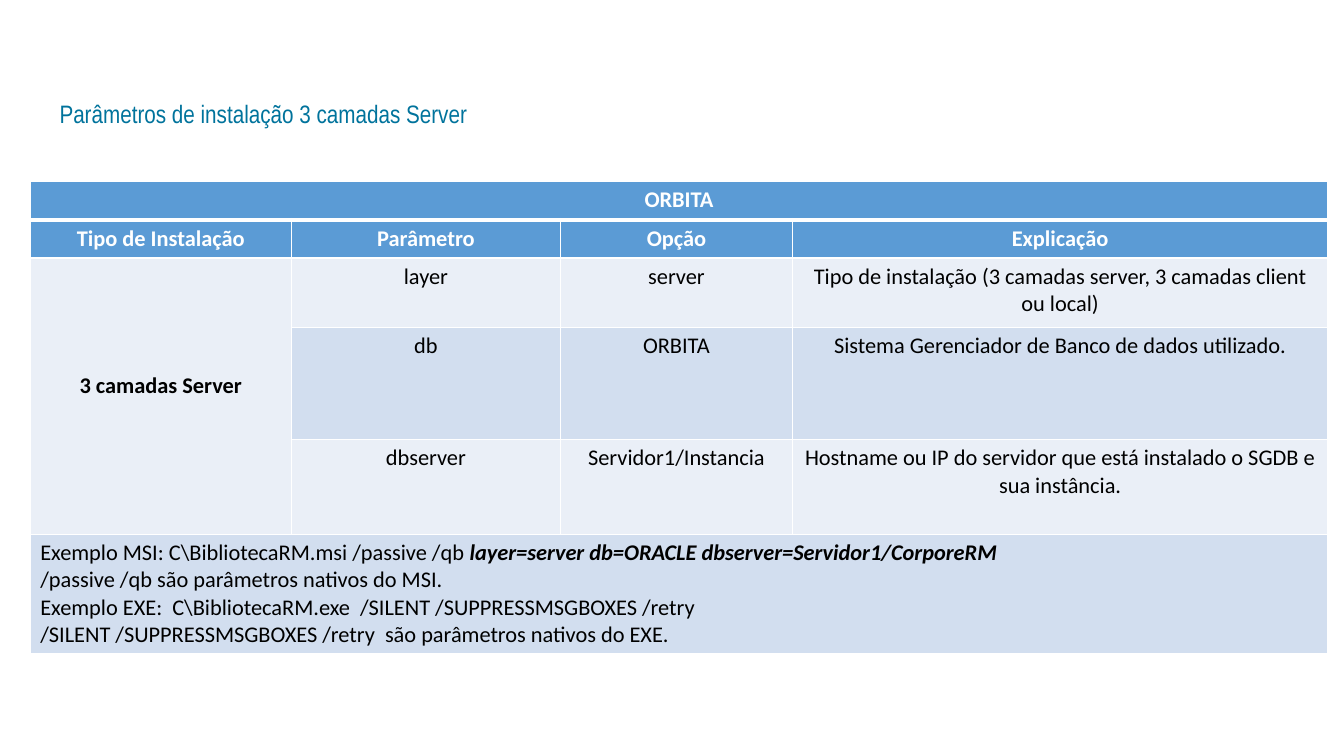
from lxml.etree import SubElement as Sub
from pptx import Presentation
from pptx.dml.color import RGBColor as Rgb
from pptx.enum.text import MSO_ANCHOR as Anchor, MSO_AUTO_SIZE as Auto, PP_ALIGN as Align
from pptx.oxml.ns import qn
from pptx.util import Inches, Pt

HUES = {"title": "00739C", "head": "5B9BD5", "light": "EAEFF7",
        "dark": "D2DEEF", "white": "FFFFFF", "black": "000000"}
TITLE = "Parâmetros de instalação 3 camadas Server"
COLS = [2.59, 2.67, 2.3, 5.31]
ROWS = [0.38, 0.38, 0.69, 1.11, 0.94, 1.18]
FILLS = ["head", "head", "light", "dark", "light", "dark"]
CELLS = [
    ["ORBITA"],
    ["Tipo de Instalação", "Parâmetro", "Opção", "Explicação"],
    ["3 camadas Server", "layer", "server",
     "Tipo de instalação (3 camadas server, 3 camadas client ou local)"],
    ["", "db", "ORBITA", "Sistema Gerenciador de Banco de dados utilizado."],
    ["", "dbserver", "Servidor1/Instancia",
     "Hostname ou IP do servidor que está instalado o SGDB e sua instância."],
]
NOTES = [
    [("Exemplo MSI: C\\BibliotecaRM.msi /passive /qb ", False),
     ("layer=server db=ORACLE dbserver=Servidor1/CorporeRM", True)],
    [("/passive /qb são parâmetros nativos do MSI.", False)],
    [("Exemplo EXE:  C\\BibliotecaRM.exe  /SILENT /SUPPRESSMSGBOXES /retry", False)],
    [("/SILENT /SUPPRESSMSGBOXES /retry  são parâmetros nativos do EXE.", False)],
]
MERGES = [((0, 0), (0, 3)), ((2, 0), (4, 0)), ((5, 0), (5, 3))]


def add_run(para, text, hue, size=16, face="Calibri", bold=False, slant=False):
    run = para.add_run()
    run.text = text
    font = run.font
    font.size, font.name, font.bold, font.italic = Pt(size), face, bold, slant
    font.color.rgb = Rgb.from_string(HUES[hue])


def add_edges(cell, row):
    props = cell._tc.get_or_add_tcPr()
    for side in "LRTB":
        thick = (row, side) in [(0, "B"), (1, "T")]
        line = Sub(props, qn("a:ln" + side), w=str(Pt(3 if thick else 1)))
        fill = Sub(line, qn("a:solidFill"))
        Sub(fill, qn("a:srgbClr"), val=HUES["white"])


def add_title(slide):
    title = slide.shapes.title
    title.left, title.top = Inches(0.49), Inches(0.96)
    title.width, title.height = Inches(5.02), Inches(0.47)
    frame = title.text_frame
    frame.word_wrap, frame.auto_size = True, Auto.NONE
    frame.vertical_anchor = Anchor.TOP
    para = frame.paragraphs[0]
    para.alignment, para.line_spacing = Align.LEFT, 0.9
    para.space_before = Pt(0)
    add_run(para, TITLE, "title", 18, "Arial Narrow")


def add_grid(slide):
    grid = slide.shapes.add_table(
        len(ROWS), len(COLS), Inches(0.3), Inches(1.8),
        Inches(sum(COLS)), Inches(sum(ROWS))).table
    for col, width in zip(grid.columns, COLS):
        col.width = Inches(width)
    for row, height in zip(grid.rows, ROWS):
        row.height = Inches(height)
    for r, hue in enumerate(FILLS):
        for c in range(len(COLS)):
            cell = grid.cell(r, c)
            add_edges(cell, r)
            cell.fill.solid()
            cell.fill.fore_color.rgb = Rgb.from_string(HUES[hue])
    for start, end in MERGES:
        grid.cell(*start).merge(grid.cell(*end))
    for r, texts in enumerate(CELLS):
        for c, text in enumerate(texts):
            if text:
                para = grid.cell(r, c).text_frame.paragraphs[0]
                para.alignment = Align.CENTER
                add_run(para, text, "white" if r < 2 else "black", bold=r < 2 or c == 0)
    kind = grid.cell(2, 0)
    kind.vertical_anchor, kind.margin_bottom = Anchor.MIDDLE, Inches(0.25)
    frame = grid.cell(5, 0).text_frame
    for i, parts in enumerate(NOTES):
        para = frame.add_paragraph() if i else frame.paragraphs[0]
        for text, strong in parts:
            add_run(para, text, "black", bold=strong, slant=strong)


def main():
    deck = Presentation()
    deck.slide_width, deck.slide_height = Inches(13.33), Inches(7.5)
    slide = deck.slides.add_slide(deck.slide_layouts[5])
    add_grid(slide)
    add_title(slide)
    deck.save("out.pptx")


if __name__ == "__main__":
    main()
